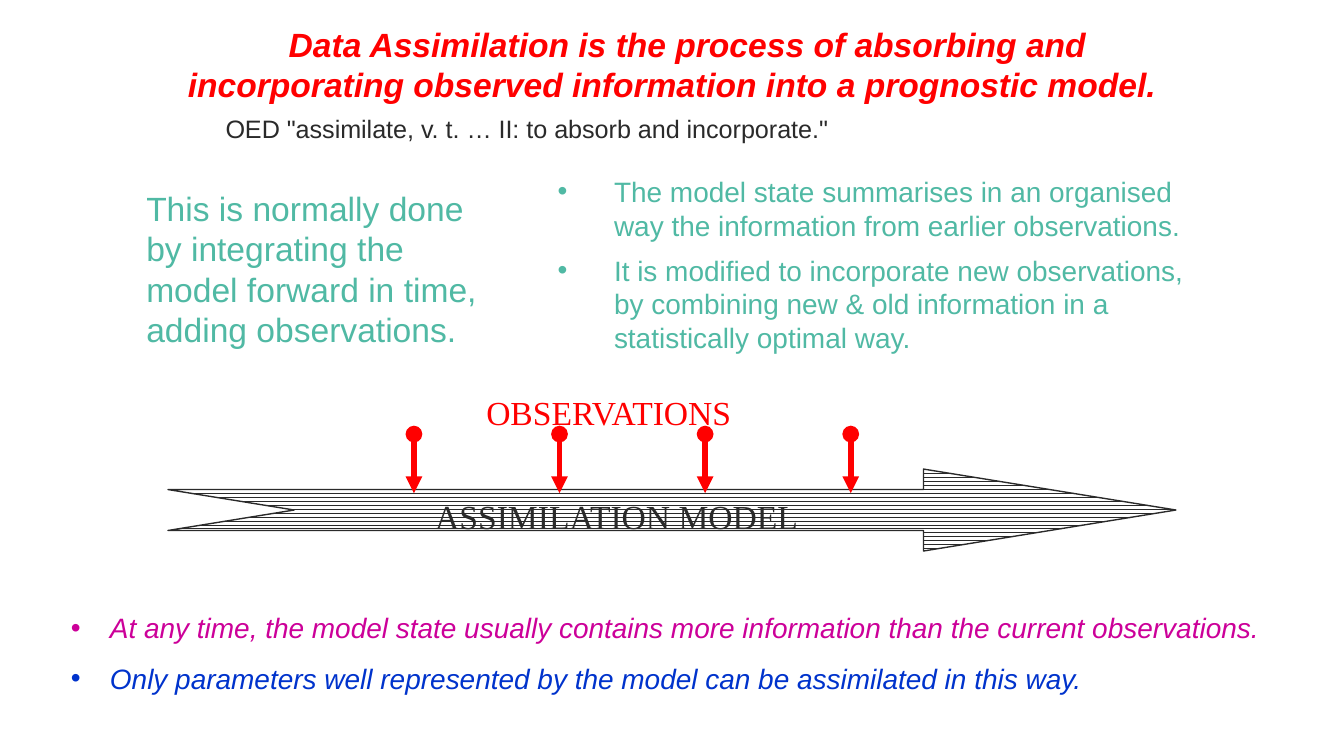
from dataclasses import dataclass

import pptx
import pptx.dml.color
import pptx.enum.dml
import pptx.enum.shapes
import pptx.enum.text
import pptx.oxml
import pptx.oxml.ns
import pptx.util
from pptx.util import Inches


@dataclass(frozen=True)
class Theme:
    sans: str = "Arial"
    serif: str = "Times New Roman"
    red: str = "FF0000"
    ink: str = "2A2A2A"
    teal: str = "50B9A4"
    magenta: str = "CC0099"
    blue: str = "0033CC"
    white: str = "FFFFFF"
    large: float = 18
    medium: float = 15
    small: float = 13.5


THEME = Theme()


@dataclass(frozen=True)
class Para:
    text: str
    color: str
    size: float = THEME.large
    font: str = THEME.sans
    bold: bool = False
    italic: bool = False
    bullet: bool = False
    margin: float = 0
    indent: float = 0
    before: float = 0
    after: float = 0
    line_spacing: float = 1


@dataclass(frozen=True)
class TextBlock:
    left: float
    top: float
    width: float
    height: float
    paras: tuple[Para, ...]


def rgb(color: str) -> pptx.dml.color.RGBColor:
    return pptx.dml.color.RGBColor.from_string(color)


def add_element(parent, tag: str, **attributes: str) -> None:
    element = pptx.oxml.parse_xml(f"<{tag} {pptx.oxml.ns.nsdecls('a')}/>")
    for key, value in attributes.items():
        element.set(key, value)
    parent.append(element)


def add_text(slide, block: TextBlock) -> None:
    box = slide.shapes.add_textbox(Inches(block.left), Inches(block.top),
                                   Inches(block.width), Inches(block.height))
    frame = box.text_frame
    frame.word_wrap = True
    frame.auto_size = pptx.enum.text.MSO_AUTO_SIZE.SHAPE_TO_FIT_TEXT
    for number, para in enumerate(block.paras):
        paragraph = frame.add_paragraph() if number else frame.paragraphs[0]
        paragraph.text = para.text
        paragraph.line_spacing = para.line_spacing
        paragraph.space_before = pptx.util.Pt(para.before)
        paragraph.space_after = pptx.util.Pt(para.after)
        properties = paragraph._p.get_or_add_pPr()
        properties.set("marL", str(Inches(para.margin)))
        properties.set("indent", str(Inches(para.indent)))
        if para.bullet:
            add_element(properties, "a:buFont", typeface=para.font)
            add_element(properties, "a:buChar", char="•")
        font = paragraph.font
        font.name, font.size = para.font, pptx.util.Pt(para.size)
        font.bold, font.italic = para.bold, para.italic
        font.color.rgb = rgb(para.color)


def add_model_arrow(slide) -> None:
    arrow = slide.shapes.add_shape(
        pptx.enum.shapes.MSO_SHAPE.NOTCHED_RIGHT_ARROW,
        Inches(1.25), Inches(3.49), Inches(7.5), Inches(0.61))
    arrow.adjustments[0] = 0.5
    arrow.adjustments[1] = 3.08
    arrow.shadow.inherit = False
    arrow.fill.patterned()
    arrow.fill.pattern = pptx.enum.dml.MSO_PATTERN.ZIG_ZAG
    arrow.fill.fore_color.rgb = rgb(THEME.ink)
    arrow.fill.back_color.rgb = rgb(THEME.white)
    arrow.line.color.rgb = rgb(THEME.ink)
    arrow.line.width = pptx.util.Pt(0.75)


def add_observation(slide, x: float) -> None:
    pin = slide.shapes.add_connector(
        pptx.enum.shapes.MSO_CONNECTOR.STRAIGHT,
        Inches(x), Inches(3.23), Inches(x), Inches(3.67))
    pin.line.color.rgb = rgb(THEME.red)
    pin.line.width = pptx.util.Pt(3)
    outline = pin.line._get_or_add_ln()
    add_element(outline, "a:headEnd", type="oval")
    add_element(outline, "a:tailEnd", type="triangle")
    add_element(pin._element.spPr, "a:effectLst")


DEFINITION = TextBlock(1.3, 0.13, 7.5, 0.93, (
    Para("Data Assimilation is the process of absorbing and incorporating "
         "observed information into a prognostic model.",
         THEME.red, bold=True, italic=True, indent=0.75),
    Para('OED "assimilate, v. t. … II: to absorb and incorporate."',
         THEME.ink, THEME.small, margin=0.28, before=4.5),
))
CONCLUSIONS = TextBlock(0.35, 4.37, 9.3, 0.86, tuple(
    Para(text, color, THEME.medium, italic=True, bullet=True,
         margin=0.37, indent=-0.29, line_spacing=1.5)
    for text, color in (
        ("At any time, the model state usually contains more information "
         "than the current observations.", THEME.magenta),
        ("Only parameters well represented by the model can be assimilated "
         "in this way.", THEME.blue),
    )))
MODEL_LABEL = TextBlock(3.14, 3.64, 4.17, 0.4, (
    Para("ASSIMILATION MODEL", THEME.ink, font=THEME.serif),))
OBSERVATIONS_LABEL = TextBlock(3.52, 2.87, 2.83, 0.4, (
    Para("OBSERVATIONS", THEME.red, font=THEME.serif),))
MODEL_STATE = TextBlock(3.85, 1.25, 5.31, 1.45, tuple(
    Para(text, THEME.teal, THEME.medium, bullet=True,
         margin=0.62, indent=-0.42, after=6)
    for text in (
        "The model state summarises in an organised way the information "
        "from earlier observations.",
        "It is modified to incorporate new observations, by combining "
        "new & old information in a statistically optimal way.",
    )))
METHOD = TextBlock(0.99, 1.35, 2.8, 1.31, (
    Para("This is normally done by integrating the model forward in time, "
         "adding observations.", THEME.teal),))


def main() -> None:
    deck = pptx.Presentation()
    # Widescreen, 16 to 9
    deck.slide_width = Inches(10)
    deck.slide_height = deck.slide_width * 9 // 16
    slide = deck.slides.add_slide(deck.slide_layouts[6])

    # Definition and conclusions
    add_text(slide, DEFINITION)
    add_text(slide, CONCLUSIONS)

    # Model timeline with observations entering at equal intervals
    add_model_arrow(slide)
    add_text(slide, MODEL_LABEL)
    add_text(slide, OBSERVATIONS_LABEL)
    first, last, count = 3.08, 6.33, 4
    for number in range(count):
        add_observation(slide, first + number * (last - first) / (count - 1))

    # Explanation above the timeline
    add_text(slide, MODEL_STATE)
    add_text(slide, METHOD)

    deck.save("out.pptx")


if __name__ == "__main__":
    main()
